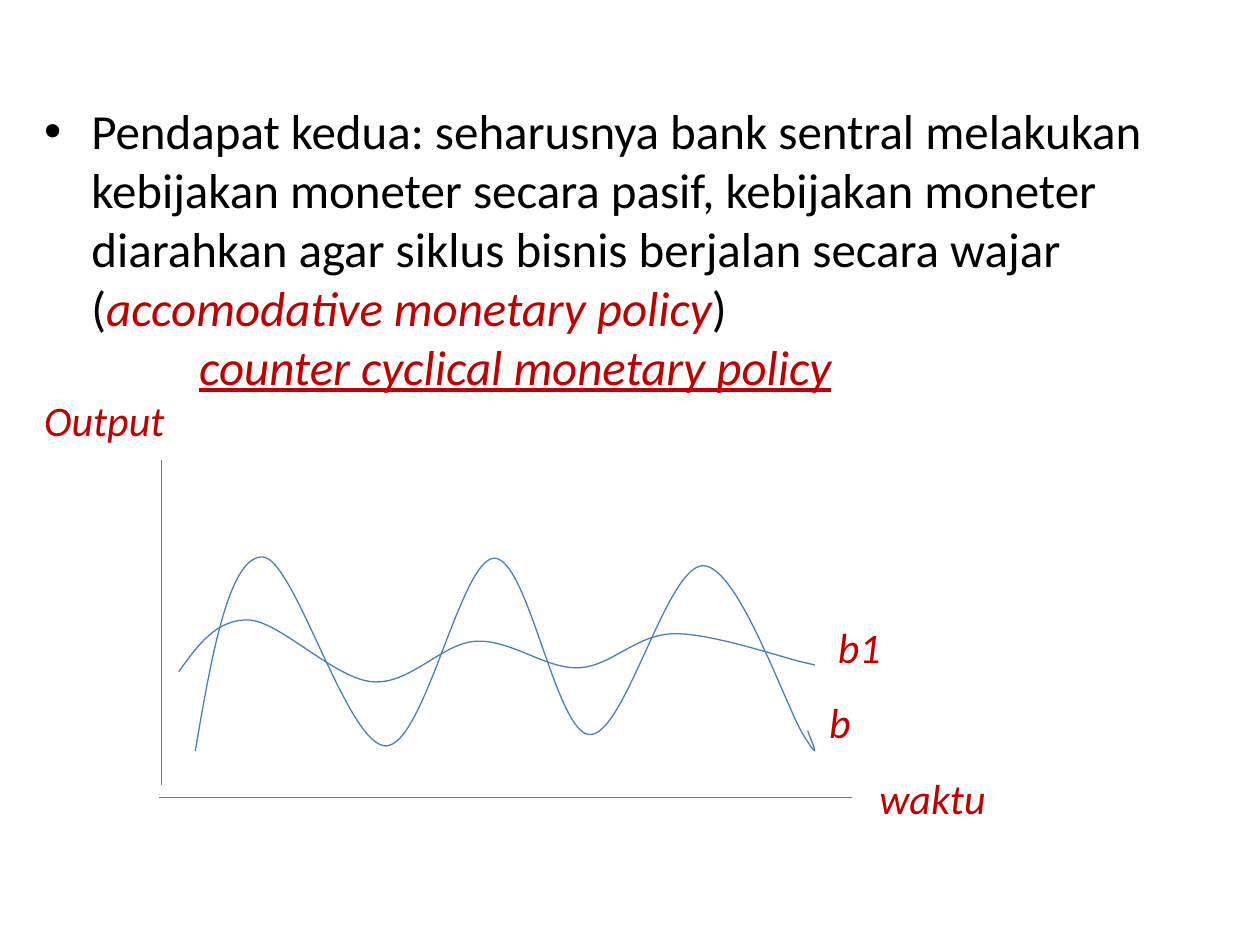
from lxml.etree import SubElement
from pptx import Presentation
from pptx.dml.color import RGBColor
from pptx.enum.shapes import MSO_CONNECTOR
from pptx.enum.text import MSO_AUTO_SIZE, MSO_ANCHOR
from pptx.oxml import parse_xml
from pptx.oxml.ns import nsdecls, qn
from pptx.util import Inches, Pt

BLACK, RED, BLUE = "000000", "C00000", "4B7EBC"

# Body paragraphs: indent (inches, None keeps the bullet), space before (points),
# line spacing, size, and runs of (text, colour, italic, underline)
PARAGRAPHS = [
    (None, 0, 1, 28, [
        ("Pendapat kedua: seharusnya bank sentral melakukan kebijakan moneter "
         "secara pasif, kebijakan moneter diarahkan agar siklus bisnis berjalan "
         "secara wajar (", BLACK, False, False),
        ("accomodative monetary policy", RED, True, False),
        (")", BLACK, False, False)]),
    (1.23, 0, 1, 28, [("counter cyclical monetary policy", RED, True, True)]),
    (0, 0, 1, 24, [("Output", RED, True, False)]),
    (6.3, 86, 1.5, 24, [("b1", RED, True, False)]),
    (6.23, 0, 1.5, 24, [("b", RED, True, False)]),
    (6.63, 0, 1.5, 24, [("waktu", RED, True, False)]),
]

# Axes and curves, in inches from the graph's top left corner.
# A curve is its box, a start point and Bezier segments (two controls and an end).
AXES = [((0.03, 0), (0.03, 2.58)), ((5.51, 2.68), (0.01, 2.68))]
CYCLE_B = ((0.3, 0.77, 4.92, 1.55), (0.3, 2.31), [
    (0.43, 1.54, 0.57, 0.77, 0.83, 0.77), (1.08, 0.76, 1.5, 2.26, 1.81, 2.27),
    (2.12, 2.27, 2.4, 0.8, 2.67, 0.78), (2.94, 0.77, 3.16, 2.17, 3.43, 2.18),
    (3.71, 2.19, 4.04, 0.84, 4.33, 0.84), (4.61, 0.84, 4.99, 1.97, 5.13, 2.19),
    (5.27, 2.41, 5.21, 2.28, 5.16, 2.15)])
CYCLE_B1 = ((0.17, 1.27, 5.04, 0.49), (0.17, 1.68), [
    (0.32, 1.47, 0.47, 1.26, 0.73, 1.27), (0.98, 1.29, 1.4, 1.73, 1.7, 1.76),
    (2, 1.79, 2.25, 1.46, 2.52, 1.44), (2.8, 1.42, 3.08, 1.66, 3.34, 1.65),
    (3.6, 1.64, 3.79, 1.39, 4.09, 1.38), (4.39, 1.37, 4.96, 1.57, 5.14, 1.61),
    (5.31, 1.65, 5.14, 1.61, 5.15, 1.61)])


def color(value):
    return RGBColor.from_string(value)


def style_line(line):
    line.color.rgb = color(BLUE)
    line.width = Pt(0.75)


def remove_bullet(paragraph, indent):
    properties = paragraph._p.get_or_add_pPr()
    properties.set("marL", str(Inches(indent)))
    properties.set("indent", "0")
    properties.append(parse_xml(f"<a:buNone {nsdecls('a')}/>"))


def add_body(slide, left, top, width, height):
    body = slide.placeholders[1]
    body.left, body.top, body.width, body.height = left, top, width, height
    text_frame = body.text_frame
    text_frame.word_wrap = True
    text_frame.auto_size = MSO_AUTO_SIZE.NONE
    text_frame.vertical_anchor = MSO_ANCHOR.TOP
    for index, (indent, before, spacing, size, runs) in enumerate(PARAGRAPHS):
        paragraph = text_frame.add_paragraph() if index else text_frame.paragraphs[0]
        paragraph.space_before = Pt(before)
        paragraph.space_after = Pt(0)
        paragraph.line_spacing = float(spacing)
        if indent is not None:
            remove_bullet(paragraph, indent)
        for text, fill, italic, underline in runs:
            run = paragraph.add_run()
            run.text = text
            font = run.font
            font.name, font.size = "Calibri", Pt(size)
            font.italic, font.underline = italic, underline
            font.color.rgb = color(fill)


def add_curve(slide, left, top, box, start, segments):
    box_left, box_top, width, height = box
    corner_x, corner_y = left + Inches(box_left), top + Inches(box_top)
    builder = slide.shapes.build_freeform(corner_x, corner_y)
    builder.add_line_segments(
        [(corner_x + Inches(width), corner_y + Inches(height))], close=False)
    curve = builder.convert_to_shape()

    # Bezier outline inside the box
    outline = next(curve._element.iter(qn("a:path")))
    for command in list(outline):
        outline.remove(command)
    for tag, numbers in [("a:moveTo", start)] + [("a:cubicBezTo", s) for s in segments]:
        command = SubElement(outline, qn(tag))
        for x, y in zip(numbers[::2], numbers[1::2]):
            SubElement(command, qn("a:pt"), x=str(Inches(x - box_left)),
                       y=str(Inches(y - box_top)))
    curve.fill.background()
    curve.shadow.inherit = False
    style_line(curve.line)


def add_axis(slide, left, top, start, end):
    axis = slide.shapes.add_connector(
        MSO_CONNECTOR.STRAIGHT, left + Inches(start[0]), top + Inches(start[1]),
        left + Inches(end[0]), top + Inches(end[1]))
    style_line(axis.line)
    axis._element.spPr.append(parse_xml(f"<a:effectLst {nsdecls('a')}/>"))


def add_graph(slide, left, top):
    for start, end in AXES:
        add_axis(slide, left, top, start, end)
    for box, start, segments in (CYCLE_B, CYCLE_B1):
        add_curve(slide, left, top, box, start, segments)


def main():
    presentation = Presentation()
    presentation.slide_width, presentation.slide_height = Inches(10), Inches(7.5)
    slide = presentation.slides.add_slide(presentation.slide_layouts[1])
    title = slide.shapes.title._element
    title.getparent().remove(title)
    add_body(slide, Inches(0.25), Inches(0.75), Inches(9), Inches(5.87))
    add_graph(slide, Inches(1.25), Inches(3.65))
    presentation.save("out.pptx")


if __name__ == "__main__":
    main()
